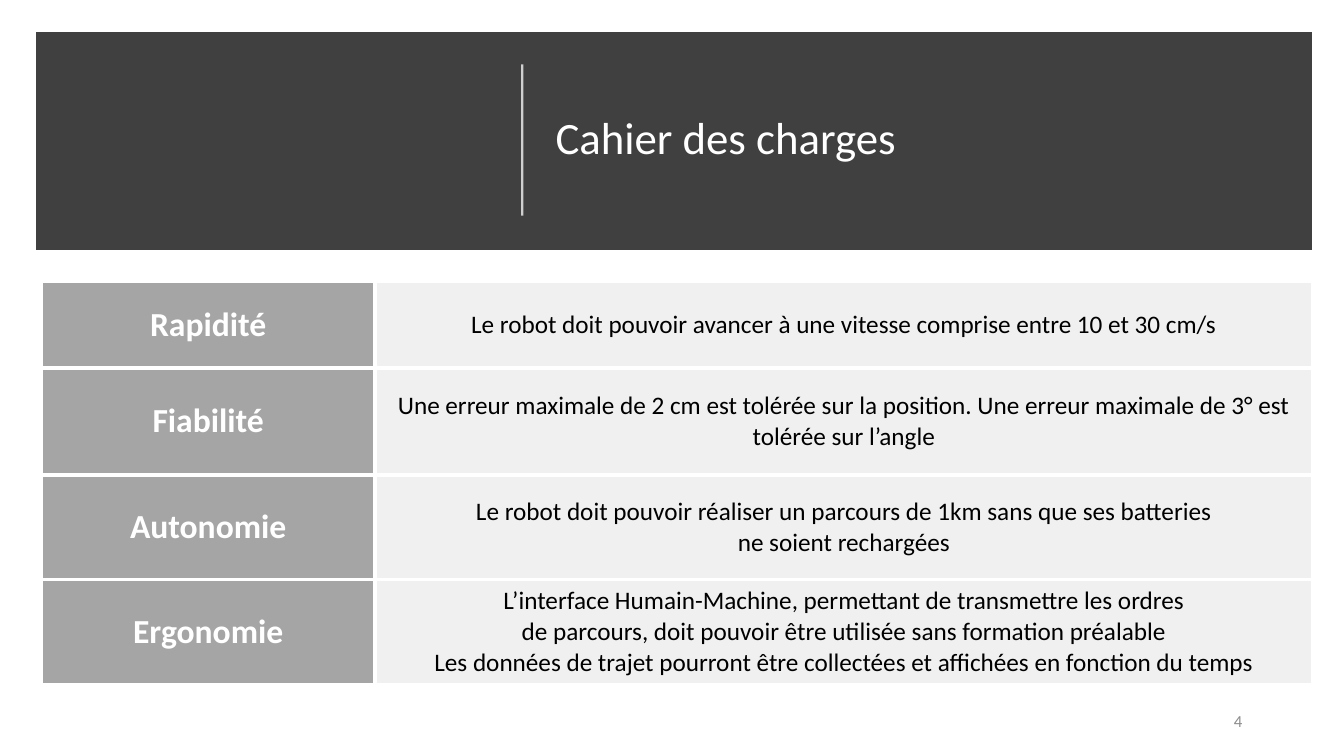
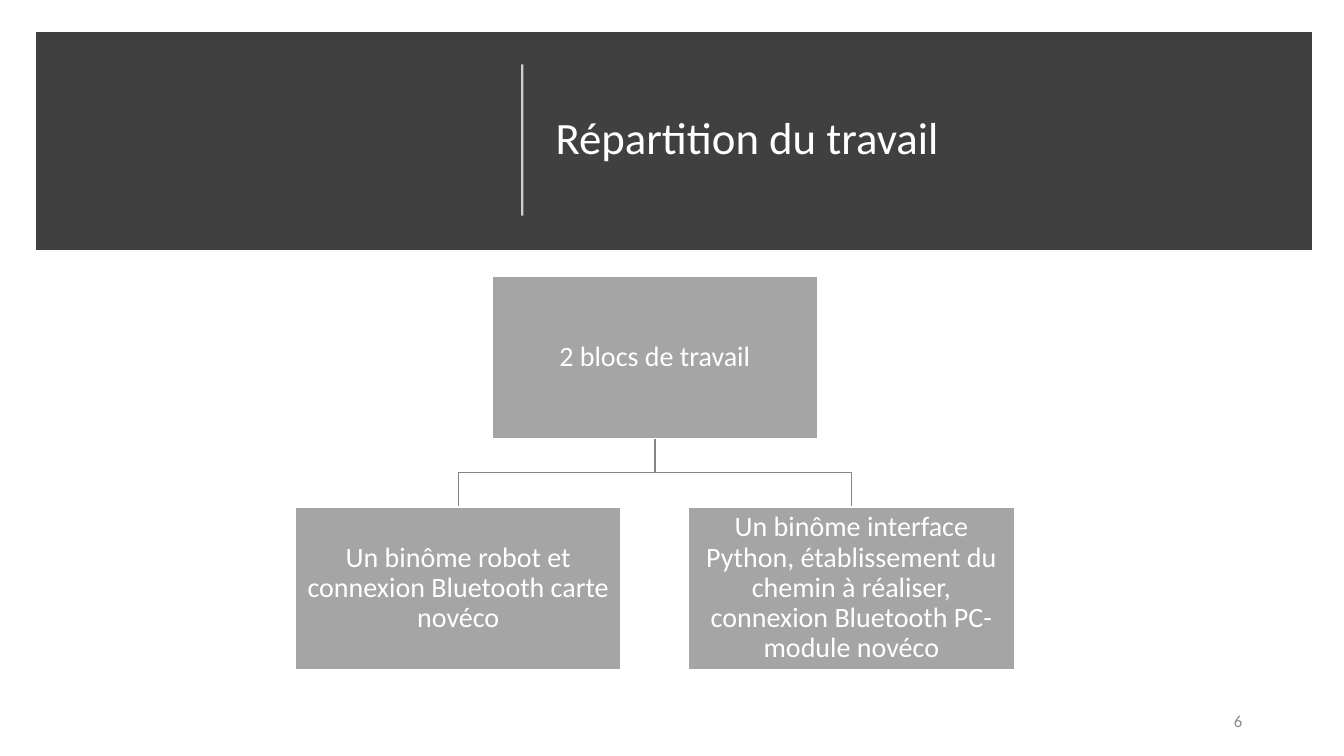
from typing import NamedTuple

from lxml.etree import SubElement
from pptx import Presentation
from pptx.dml.color import RGBColor
from pptx.enum.shapes import MSO_CONNECTOR, MSO_SHAPE
from pptx.enum.text import MSO_ANCHOR, MSO_AUTO_SIZE, PP_ALIGN
from pptx.oxml.ns import qn
from pptx.util import Inches, Pt

FONT = "Calibri"
WHITE = RGBColor(0xFF, 0xFF, 0xFF)
BLACK = RGBColor(0x00, 0x00, 0x00)
BAND = RGBColor(0x40, 0x40, 0x40)
ACCENT = RGBColor(0xA5, 0xA5, 0xA5)
PALE = RGBColor(0xF0, 0xF0, 0xF0)
LINK = RGBColor(0x84, 0x84, 0x84)
NUMBER = RGBColor(0x8C, 0x8C, 0x8C)


class Requirement(NamedTuple):
    label: str
    details: str
    height: float


class Block(NamedTuple):
    text: str
    left: float
    top: float


# In details, \v breaks a line and \n starts a paragraph
REQUIREMENTS = [
    Requirement("Rapidité", "Le robot doit pouvoir avancer à une vitesse comprise entre 10 et 30 cm/s", 0.86),
    Requirement("Fiabilité", "Une erreur maximale de 2 cm est tolérée sur la position. "
                "Une erreur maximale de 3° est tolérée sur l’angle", 1.06),
    Requirement("Autonomie", "Le robot doit pouvoir réaliser un parcours de 1km sans que ses batteries\v"
                "ne soient rechargées", 1.04),
    Requirement("Ergonomie", "L’interface Humain-Machine, permettant de transmettre les ordres\v"
                "de parcours, doit pouvoir être utilisée sans formation préalable\n"
                "Les données de trajet pourront être collectées et affichées en fonction du temps", 1.04),
]
COLUMN_WIDTHS = (3.31, 9.3)

BLOCK_WIDTH, BLOCK_HEIGHT = 3.23, 1.61
ROOT = Block("2 blocs de travail", 4.88, 2.74)
TEAMS = [
    Block("Un binôme robot et connexion Bluetooth carte novéco", 2.93, 5.03),
    Block("Un binôme interface Python, établissement du chemin à réaliser, "
          "connexion Bluetooth PC-module novéco", 6.83, 5.03),
]


def write(frame, text: str, *, size: float, color: RGBColor, bold: bool = False,
          align=PP_ALIGN.CENTER, spacing: float = 1.0) -> None:
    """Fill a text frame, one paragraph per line of text."""
    frame.word_wrap = True
    frame.text = text
    for paragraph in frame.paragraphs:
        paragraph.alignment = align
        paragraph.line_spacing = spacing
        font = paragraph.font
        font.name, font.size, font.bold = FONT, Pt(size), bold
        font.color.rgb = color
        for run in paragraph.runs:
            run.font.size = Pt(size)


def add_box(slide, left: float, top: float, width: float, height: float,
            fill: RGBColor, line: RGBColor, line_width: float = 1):
    box = slide.shapes.add_shape(MSO_SHAPE.RECTANGLE, Inches(left), Inches(top), Inches(width), Inches(height))
    box.shadow.inherit = False
    box.fill.solid()
    box.fill.fore_color.rgb = fill
    box.line.color.rgb = line
    box.line.width = Pt(line_width)
    # Square corners
    SubElement(box.element.spPr.find(qn("a:ln")), qn("a:miter"), lim="800000")
    return box


def add_line(slide, x1: float, y1: float, x2: float, y2: float, color: RGBColor, width: float,
             kind=MSO_CONNECTOR.STRAIGHT):
    line = slide.shapes.add_connector(kind, Inches(x1), Inches(y1), Inches(x2), Inches(y2))
    line.line.color.rgb = color
    line.line.width = Pt(width)
    SubElement(line.element.spPr, qn("a:effectLst"))
    return line


def add_slide(deck, title_text: str, number: str):
    """Start a slide with its title band and slide number."""
    slide = deck.slides.add_slide(deck.slide_layouts[5])
    add_box(slide, 0.43, 0.39, 12.51, 2.02, BAND, BAND, 10)

    # Translucent divider beside the title
    divider = add_line(slide, 5.18, 2.14, 5.18, 0.64, WHITE, 1.5)
    for color in divider.element.spPr.iter(qn("a:srgbClr")):
        SubElement(color, qn("a:alpha"), val="75000")

    # Title, brought in front of the band
    title = slide.shapes.title
    title.left, title.top = Inches(5.41), Inches(0.55)
    title.width, title.height = Inches(7.23), Inches(1.67)
    divider.element.addnext(title.element)
    title.text_frame.auto_size = MSO_AUTO_SIZE.NONE
    title.text_frame.vertical_anchor = MSO_ANCHOR.MIDDLE
    write(title.text_frame, title_text, size=32, color=WHITE, align=PP_ALIGN.LEFT, spacing=0.9)

    # Slide number
    footer = slide.shapes.add_textbox(Inches(9.42), Inches(6.95), Inches(3), Inches(0.4))
    footer.text_frame.vertical_anchor = MSO_ANCHOR.MIDDLE
    write(footer.text_frame, number, size=12, color=NUMBER, align=PP_ALIGN.RIGHT)
    return slide


def format_cell(cell, fill: RGBColor) -> None:
    """Give a cell its fill and white borders."""
    cell.vertical_anchor = MSO_ANCHOR.MIDDLE
    cell.fill.solid()
    cell.fill.fore_color.rgb = fill
    properties = cell._tc.get_or_add_tcPr()
    for position, side in enumerate(("lnL", "lnR", "lnT", "lnB")):
        border = SubElement(properties, qn(f"a:{side}"), w=str(Pt(3)))
        SubElement(SubElement(border, qn("a:solidFill")), qn("a:srgbClr"), val=str(WHITE))
        properties.insert(position, border)


def add_requirements(slide) -> None:
    height = sum(requirement.height for requirement in REQUIREMENTS)
    table = slide.shapes.add_table(len(REQUIREMENTS), len(COLUMN_WIDTHS), Inches(0.41), Inches(2.79),
                                   Inches(sum(COLUMN_WIDTHS)), Inches(height)).table
    table.first_row = table.horz_banding = False
    for column, width in zip(table.columns, COLUMN_WIDTHS):
        column.width = Inches(width)
    for row, requirement in zip(table.rows, REQUIREMENTS):
        row.height = Inches(requirement.height)
        label, details = row.cells
        format_cell(label, ACCENT)
        write(label.text_frame, requirement.label, size=24, color=WHITE, bold=True)
        format_cell(details, PALE)
        write(details.text_frame, requirement.details, size=18, color=BLACK)


def add_block(slide, block: Block) -> None:
    box = add_box(slide, block.left, block.top, BLOCK_WIDTH, BLOCK_HEIGHT, ACCENT, WHITE)
    frame = box.text_frame
    frame.margin_left = frame.margin_right = Inches(0.05)
    frame.margin_top = frame.margin_bottom = Inches(0.01)
    frame.vertical_anchor = MSO_ANCHOR.MIDDLE
    write(frame, block.text, size=20, color=WHITE, spacing=0.9)


def add_branch(slide, parent: Block, child: Block) -> None:
    """Draw an elbow from the parent's bottom to the child's top."""
    start_y = parent.top + BLOCK_HEIGHT
    center_x = (parent.left + child.left + BLOCK_WIDTH) / 2
    center_y = (start_y + child.top) / 2
    goes_right = child.left > parent.left
    # The elbow lies on its side until a quarter turn sets it upright
    half_length = (child.top - start_y) / 2 * (-1 if goes_right else 1)
    half_span = abs(child.left - parent.left) / 2
    branch = add_line(slide, center_x - half_length, center_y - half_span,
                      center_x + half_length, center_y + half_span, LINK, 1, MSO_CONNECTOR.ELBOW)
    quarter_turns = 3 if goes_right else 1
    branch.element.spPr.find(qn("a:xfrm")).set("rot", str(quarter_turns * 90 * 60000))


def add_work_tree(slide) -> None:
    for team in reversed(TEAMS):
        add_branch(slide, ROOT, team)
    for block in (ROOT, *TEAMS):
        add_block(slide, block)


def main() -> None:
    deck = Presentation()
    deck.slide_width, deck.slide_height = Inches(13.33), Inches(7.5)
    add_requirements(add_slide(deck, "Cahier des charges", "4"))
    add_work_tree(add_slide(deck, "Répartition du travail", "6"))
    deck.save("out.pptx")


if __name__ == "__main__":
    main()
